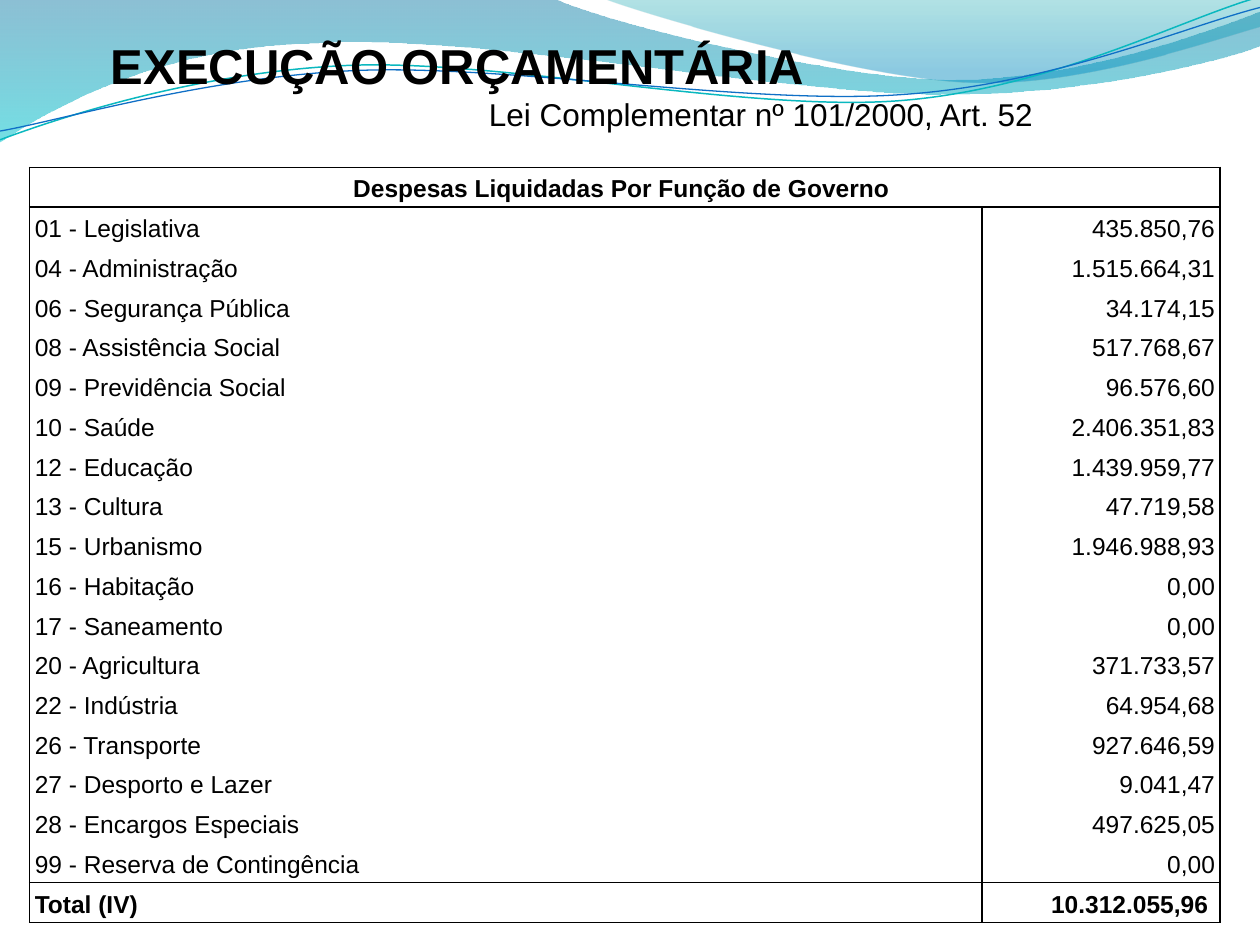
"""Build the slide on budget spending by government function."""
from math import cos, radians, sin

from lxml import etree
from pptx import Presentation
from pptx import util as u
from pptx.dml import color
from pptx.enum import text
from pptx.oxml import ns

HUES = {"ink": "000000", "deep": "0074A1", "cyan": "00C6CF", "teal": "00A1A9",
        "sky": "008BBF", "aqua": "0AB8BF", "blue": "0F6FC6"}
TITLE = "EXECUÇÃO ORÇAMENTÁRIA"
LAW = "Lei Complementar nº 101/2000, Art. 52"
HEAD = "Despesas Liquidadas Por Função de Governo "
ROWS = [
    ("01 - Legislativa", "435.850,76"),
    ("04 - Administração", "1.515.664,31"),
    ("06 - Segurança Pública", "34.174,15"),
    ("08 - Assistência Social", "517.768,67"),
    ("09 - Previdência Social", "96.576,60"),
    ("10 - Saúde", "2.406.351,83"),
    ("12 - Educação", "1.439.959,77"),
    ("13 - Cultura", "47.719,58"),
    ("15 - Urbanismo", "1.946.988,93"),
    ("16 - Habitação", "0,00"),
    ("17 - Saneamento", "0,00"),
    ("20 - Agricultura", "371.733,57"),
    ("22 - Indústria", "64.954,68"),
    ("26 - Transporte", "927.646,59"),
    ("27 - Desporto e Lazer", "9.041,47"),
    ("28 - Encargos Especiais", "497.625,05"),
    ("99 - Reserva de Contingência", "0,00"),
]
TOTAL = ("Total (IV)", "10.312.055,96 ")
WAVES = [
    {"path": [(0, 0), (316.8, -0.7), (342.7, 12.2, 478.1, 45.4, 545.8, 45.4),
              (614.2, 45.4, 689.8, 18.7, 720, 6.5), (720.7, 25.9),
              (707.8, 31.7, 626.4, 54.7, 537.1, 54),
              (447.8, 54, 275, 20.2, 185, 24.5),
              (92.9, 25.9, 33.1, 59.8, -0.7, 81.4)],
     "stops": [(0, "deep", 45), (1, "cyan", 55)]},
    {"path": [(344.9, -0.7), (366.5, 7.9, 491, 44.6, 553.7, 46.8),
              (616.3, 49.7, 691.9, 23, 720, 15.1), (720, 0)],
     "stops": [(0, "teal", 30), (0.8, "sky", 45)]},
    {"path": [(0, 79.9), (34.6, 67, 113.8, 41, 199.4, 37.4),
              (284.4, 33.8, 427, 64.1, 513.4, 57.6),
              (599.8, 51.1, 675.4, 10.8, 718.6, -1.4)],
     "line": ("aqua", 0.85)},
    {"path": [(0, 74.9), (33.8, 69.1, 118.1, 43.9, 203.8, 40.3),
              (290.2, 36.7, 429.8, 60.5, 516.2, 54),
              (601.9, 48.2, 677.5, 15.1, 720, 4.3)],
     "line": ("blue", 0.75)},
]
TILT, PIVOT = 357.3, (360, 42)


def rgb(name):
    return color.RGBColor.from_string(HUES[name])


def put(para, words, size=14, bold=False, align="LEFT", gap=1.0, left=0, above=0):
    para.alignment = getattr(text.PP_ALIGN, align)
    para.line_spacing = gap
    if above:
        para.space_before = u.Pt(above)
    if left:
        para._p.get_or_add_pPr().set("marL", str(u.Pt(left)))
    run = para.add_run()
    run.text = words
    font = run.font
    font.name, font.size, font.bold = "Arial", u.Pt(size), bold
    font.color.rgb = rgb("ink")


def turn(dot):
    angle = radians(360 - TILT)
    x, y = dot[0] - PIVOT[0], dot[1] - PIVOT[1]
    return (PIVOT[0] + x * cos(angle) - y * sin(angle),
            PIVOT[1] + x * sin(angle) + y * cos(angle))


def bend(shape, path):
    legs = iter(list(shape._element.iter(ns.qn("a:lnTo"))))
    for step in path[1:]:
        leg = next(legs)
        if len(step) == 6:
            leg.addprevious(curve := etree.Element(ns.qn("a:cubicBezTo")))
            for part in (leg, next(legs), next(legs)):
                curve.append(part[0])
                part.getparent().remove(part)


def wave(slide, path, stops=None, line=None):
    dots = [step[i:i + 2] for step in path for i in range(0, len(step), 2)]
    if line:
        dots = [turn(dot) for dot in dots]
    dots = [(u.Pt(x), u.Pt(y)) for x, y in dots]
    pen = slide.shapes.build_freeform(*dots[0], scale=1.0)
    pen.add_line_segments(dots[1:], close=bool(stops))
    shape = pen.convert_to_shape()
    bend(shape, path)
    shape.shadow.inherit = False
    if line:
        shape.fill.background()
        shape.line.color.rgb = rgb(line[0])
        shape.line.width = u.Pt(line[1])
        shape.rotation = TILT
        return
    shape.line.fill.background()
    shape.fill.gradient()
    shape.fill.gradient_angle = 270
    for stop, (place, hue, _) in zip(shape.fill.gradient_stops, stops):
        stop.position = place
        stop.color.rgb = rgb(hue)
    for tone, (_, _, alpha) in zip(shape._element.spPr.iter(ns.qn("a:srgbClr")), stops):
        etree.SubElement(tone, ns.qn("a:alpha"), val=str(alpha * 1000))


def edge(cell, sides):
    props = cell._tc.get_or_add_tcPr()
    for side in "LRTB":
        line = etree.SubElement(props, ns.qn("a:ln" + side), w=str(u.Pt(1)))
        if side in sides:
            fill = etree.SubElement(line, ns.qn("a:solidFill"))
            etree.SubElement(fill, ns.qn("a:srgbClr"), val=HUES["ink"])
        else:
            etree.SubElement(line, ns.qn("a:noFill"))


def grid(slide):
    rows = [(HEAD, "")] + ROWS + [TOTAL]
    last, tall = len(rows) - 1, 431.6
    table = slide.shapes.add_table(len(rows), 2, u.Pt(16.9), u.Pt(95.7),
                                   u.Pt(680.4), u.Pt(tall)).table
    table.first_row = table.horz_banding = False
    for col, width in zip(table.columns, (544.3, 136.1)):
        col.width = u.Pt(width)
    for r, pair in enumerate(rows):
        table.rows[r].height = u.Pt(tall / len(rows))
        top = "T" if r in (0, 1, last) else ""
        base = "B" if r in (0, last - 1, last) else ""
        for c, words in enumerate(pair):
            cell = table.cell(r, c)
            cell.margin_left = cell.margin_right = u.Pt(3)
            cell.margin_top = cell.margin_bottom = u.Pt(0.7)
            cell.vertical_anchor = text.MSO_ANCHOR.MIDDLE
            edge(cell, "LR" + top + base)
            cell.fill.background()
            if words:
                align = "CENTER" if r == 0 else ("LEFT", "RIGHT")[c]
                put(cell.text_frame.paragraphs[0], words, bold=r in (0, last),
                    align=align, gap=1.15)
    table.cell(0, 0).merge(table.cell(0, 1))


def main():
    deck = Presentation()
    deck.slide_width, deck.slide_height = u.Pt(720), u.Pt(540)
    slide = deck.slides.add_slide(deck.slide_layouts[5])
    for item in WAVES:
        wave(slide, **item)
    grid(slide)
    title = slide.shapes.title
    slide.shapes.element.append(title.element)
    title.left, title.top = u.Pt(56.2), u.Pt(16.6)
    title.width, title.height = u.Pt(624.2), u.Pt(85)
    frame = title.text_frame
    frame.word_wrap = True
    frame.auto_size = text.MSO_AUTO_SIZE.NONE
    frame.vertical_anchor = text.MSO_ANCHOR.TOP
    put(frame.paragraphs[0], TITLE, size=28, bold=True)
    put(frame.add_paragraph(), LAW, size=18, left=216, above=0.5)
    deck.save("out.pptx")


if __name__ == "__main__":
    main()
